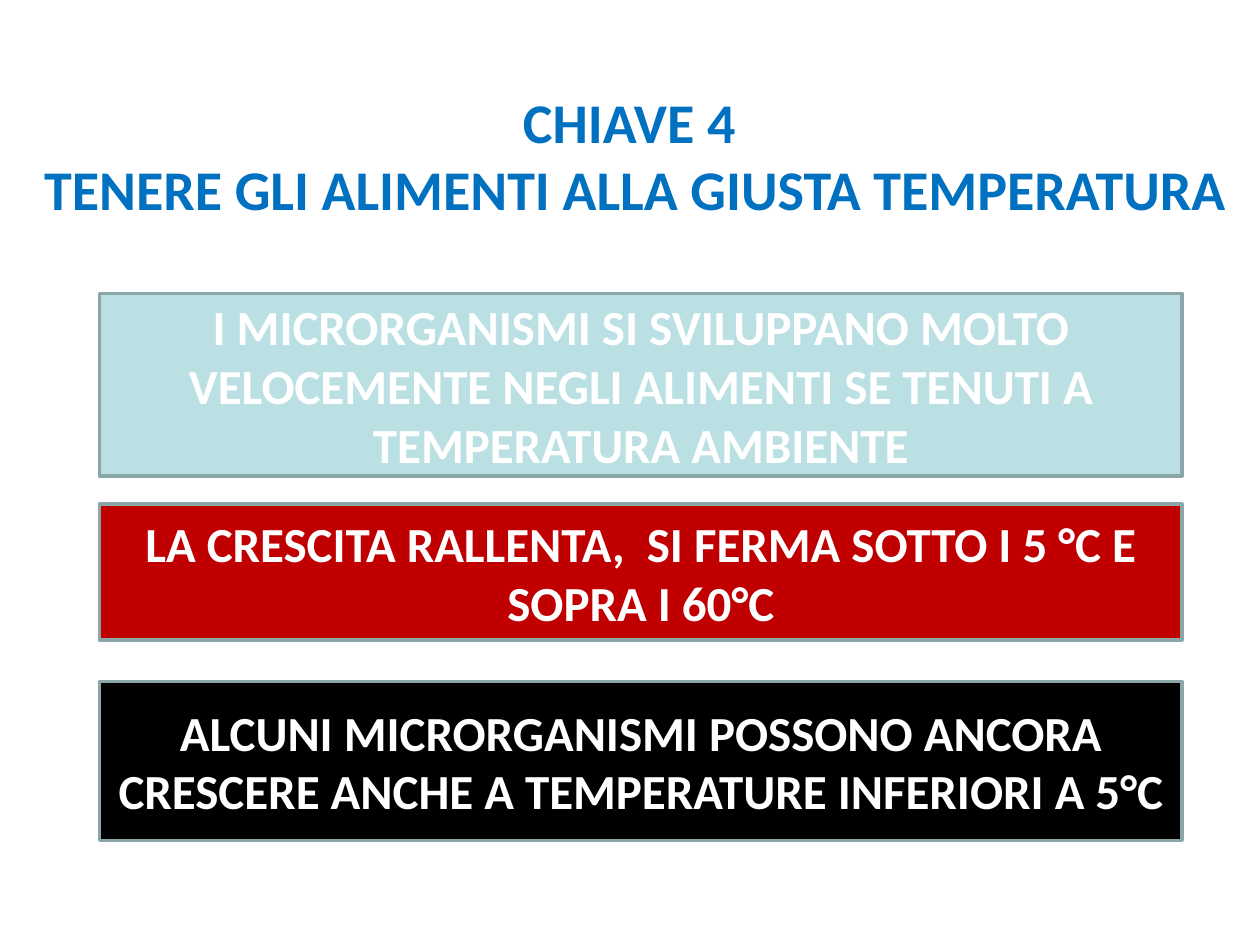
import pptx
import pptx.dml.color
import pptx.enum.shapes
import pptx.enum.text
import pptx.util

PAGE_WIDTH, PAGE_HEIGHT = 10, 7.5
BANNER_LEFT, BANNER_WIDTH = 0.79, 8.59
BANNERS = [
    (2.33, 1.45, "BBE0E3", "I MICRORGANISMI SI SVILUPPANO MOLTO VELOCEMENTE "
                           "NEGLI ALIMENTI SE TENUTI A TEMPERATURA AMBIENTE"),
    (4, 1.08, "C00000", "LA CRESCITA RALLENTA,  SI FERMA SOTTO I 5 °C E SOPRA I 60°C"),
    (5.41, 1.26, "000000", "ALCUNI MICRORGANISMI POSSONO ANCORA CRESCERE "
                           "ANCHE A TEMPERATURE INFERIORI A 5°C"),
]


def colour(value):
    return pptx.dml.color.RGBColor.from_string(value)


def add_span(para, text, size, tint):
    span = para.add_run()
    span.text = text
    span.font.name = "Calibri"
    span.font.size = pptx.util.Pt(size)
    span.font.bold = True
    span.font.color.rgb = colour(tint)


def centre_text(shape):
    frame = shape.text_frame
    frame.word_wrap = True
    frame.auto_size = pptx.enum.text.MSO_AUTO_SIZE.NONE
    frame.vertical_anchor = pptx.enum.text.MSO_ANCHOR.MIDDLE
    para = frame.paragraphs[0]
    para.alignment = pptx.enum.text.PP_ALIGN.CENTER
    para.space_before = pptx.util.Pt(0)
    return para


def place_title(page, box):
    title = page.shapes.title
    title.left, title.top, title.width, title.height = map(pptx.util.Inches, box)
    para = centre_text(title)
    add_span(para, "CHIAVE 4 ", 32, "0070C0")
    para.add_line_break()
    add_span(para, "TENERE GLI ALIMENTI ALLA GIUSTA TEMPERATURA", 32, "0070C0")


def place_banner(page, box, fill, text):
    banner = page.shapes.add_shape(
        pptx.enum.shapes.MSO_SHAPE.RECTANGLE, *map(pptx.util.Inches, box))
    banner.shadow.inherit = False
    banner.fill.solid()
    banner.fill.fore_color.rgb = colour(fill)
    banner.line.color.rgb = colour("8AA6A8")
    banner.line.width = pptx.util.Pt(2)
    add_span(centre_text(banner), text, 28, "FFFFFF")


def main():
    deck = pptx.Presentation()
    deck.slide_width = pptx.util.Inches(PAGE_WIDTH)
    deck.slide_height = pptx.util.Inches(PAGE_HEIGHT)
    page = deck.slides.add_slide(deck.slide_layouts.get_by_name("Title Only"))
    place_title(page, (0.09, 0.6, PAGE_WIDTH - 0.09, 1.25))
    for top, height, fill, text in BANNERS:
        place_banner(page, (BANNER_LEFT, top, BANNER_WIDTH, height), fill, text)
    deck.save("out.pptx")


if __name__ == "__main__":
    main()
